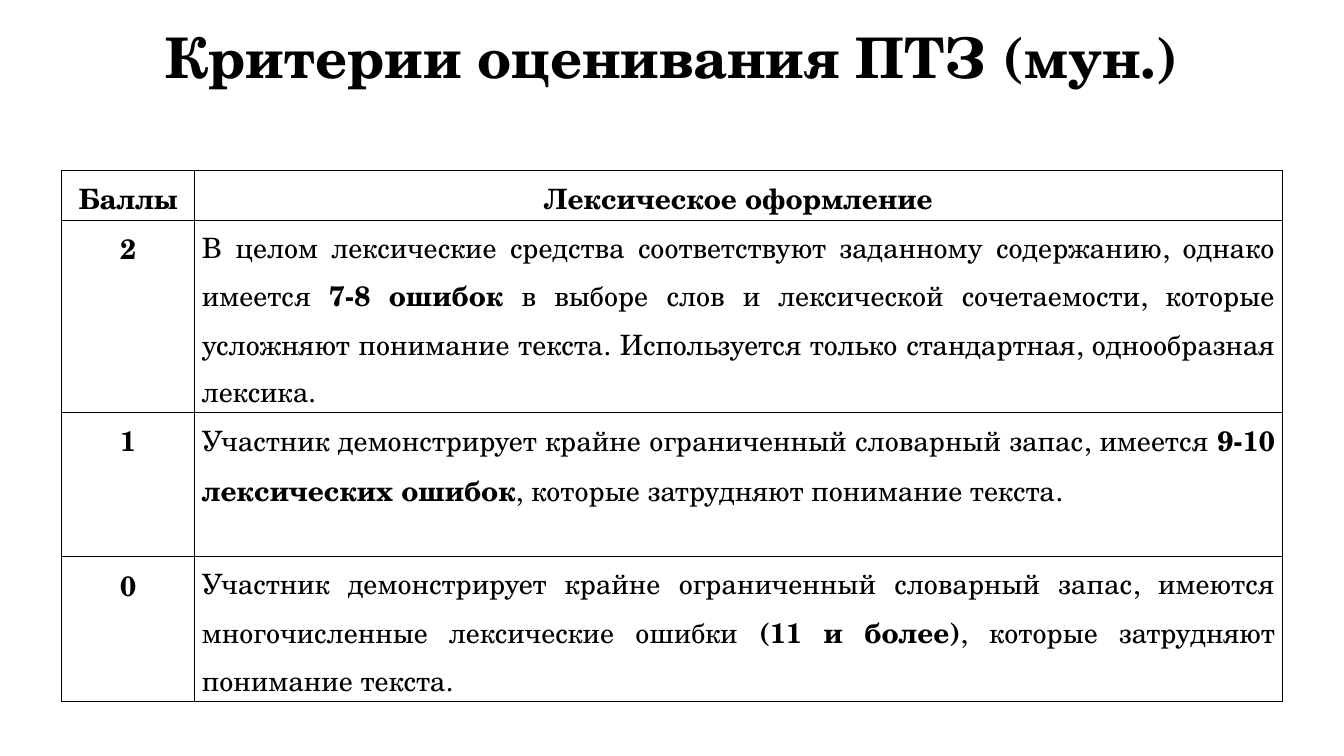
import pptx
import pptx.dml.color
import pptx.enum.text
import pptx.oxml
import pptx.util
from lxml import etree

Cm = pptx.util.Cm
Pt = pptx.util.Pt
ALIGN = pptx.enum.text.PP_ALIGN
ANCHOR = pptx.enum.text.MSO_ANCHOR
BLACK = pptx.dml.color.RGBColor(0, 0, 0)
WHITE = pptx.dml.color.RGBColor(255, 255, 255)
FONT = "TeX Gyre Schola"

COLS = [3.36, 27.4]
ROWS = [1.26, 4.84, 3.64, 3.64]
HEADS = ["Баллы", "Лексическое оформление"]
# Each description alternates plain and bold parts.
SCORES = [
    ("2", ["В целом лексические средства соответствуют заданному содержанию, "
           "однако имеется ",
           "7-8 ошибок ",
           "в выборе слов и лексической сочетаемости, которые усложняют "
           "понимание текста. Используется только стандартная, однообразная "
           "лексика."]),
    ("1", ["Участник демонстрирует крайне ограниченный словарный запас, имеется ",
           "9-10 лексических ошибок",
           ", которые затрудняют понимание текста."]),
    ("0", ["Участник демонстрирует крайне ограниченный словарный запас, "
           "имеются многочисленные лексические ошибки ",
           "(11 и более)",
           ", которые затрудняют понимание текста."]),
]


def write(frame, parts, size=20, align=ALIGN.CENTER, lines=1.15):
    """Write one paragraph; a string is bold, a list alternates plain and bold."""
    if isinstance(parts, str):
        runs = [(parts, True)]
    else:
        runs = [(part, i % 2 == 1) for i, part in enumerate(parts)]
    para = frame.paragraphs[0]
    para.alignment = align
    para.line_spacing = lines
    para.space_before = Pt(0)
    para.space_after = Pt(0)
    for text, bold in runs:
        run = para.add_run()
        run.text = text
        run.font.name = FONT
        run.font.size = Pt(size)
        run.font.bold = bold
        run.font.color.rgb = BLACK


def add_title(slide, text):
    box = slide.shapes.add_textbox(Cm(2.33), Cm(0.53), Cm(29.21), Cm(1.98))
    frame = box.text_frame
    frame.word_wrap = True
    frame.vertical_anchor = ANCHOR.MIDDLE
    write(frame, text, size=40, lines=0.9)


def add_edges(cell):
    """Draw a thin black border on all four sides; call before the fill is set."""
    props = cell._tc.get_or_add_tcPr()
    for side in ("lnL", "lnR", "lnT", "lnB"):
        edge = etree.SubElement(props, pptx.oxml.ns.qn(f"a:{side}"), w=str(Pt(1)))
        fill = etree.SubElement(edge, pptx.oxml.ns.qn("a:solidFill"))
        etree.SubElement(fill, pptx.oxml.ns.qn("a:srgbClr"), val=str(BLACK))


def fill_cell(cell, parts, align=ALIGN.CENTER):
    add_edges(cell)
    cell.fill.solid()
    cell.fill.fore_color.rgb = WHITE
    cell.margin_left = cell.margin_right = Cm(0.18)
    cell.margin_top = cell.margin_bottom = Cm(0)
    write(cell.text_frame, parts, align=align)


def add_grid(slide):
    frame = slide.shapes.add_table(len(ROWS), len(COLS), Cm(1.55), Cm(4.29),
                                   Cm(sum(COLS)), Cm(sum(ROWS)))
    table = frame.table
    table.horz_banding = False
    for col, width in zip(table.columns, COLS):
        col.width = Cm(width)
    for row, height in zip(table.rows, ROWS):
        row.height = Cm(height)
    for i, head in enumerate(HEADS):
        fill_cell(table.cell(0, i), head)
    for i, (score, parts) in enumerate(SCORES, 1):
        fill_cell(table.cell(i, 0), score)
        fill_cell(table.cell(i, 1), parts, align=ALIGN.JUSTIFY)


def main():
    deck = pptx.Presentation()
    deck.slide_width = Cm(33.87)
    deck.slide_height = Cm(19.05)
    slide = deck.slides.add_slide(deck.slide_layouts[6])
    add_title(slide, "Критерии оценивания ПТЗ (мун.)")
    add_grid(slide)
    deck.save("out.pptx")


if __name__ == "__main__":
    main()
